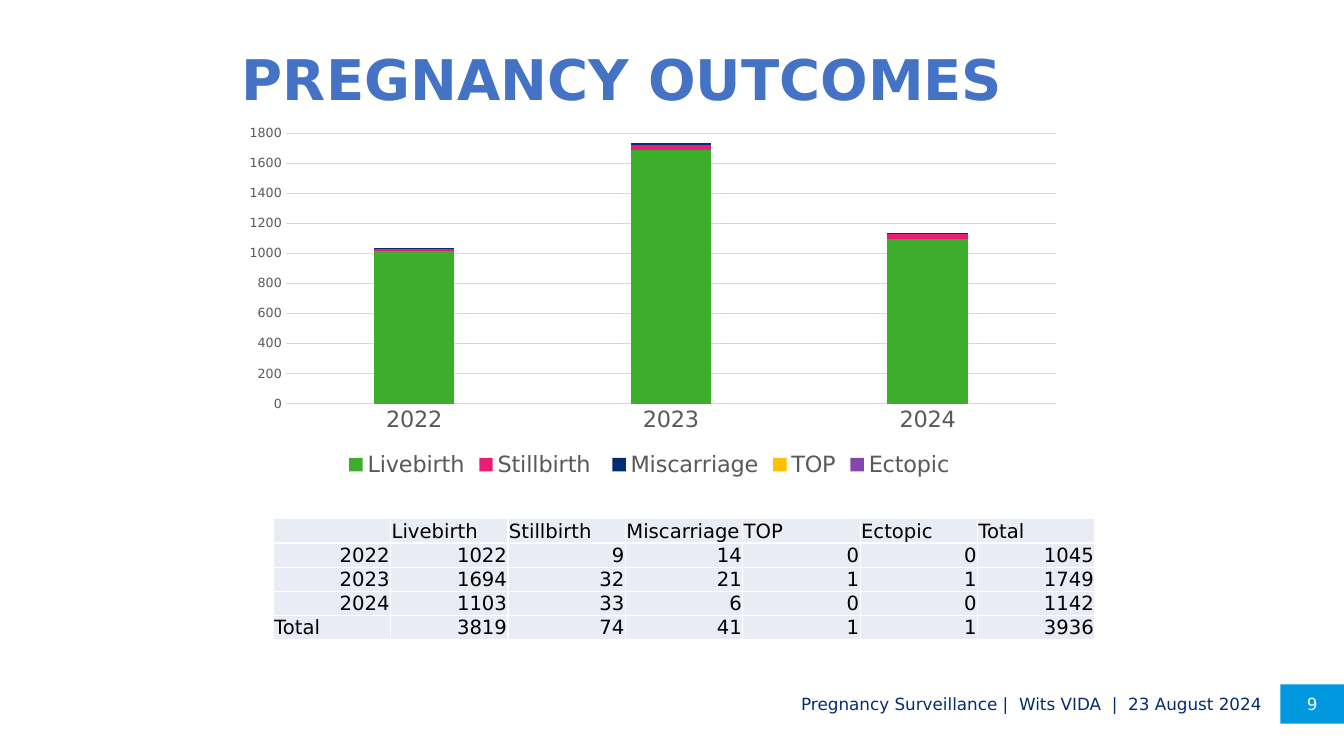
from lxml import etree
from pptx import Presentation
from pptx import util as u
from pptx.chart import data as chart_data
from pptx.dml.color import RGBColor
from pptx.enum import chart as charts, shapes, text
from pptx.oxml import ns

ALIGN, ANCHOR = text.PP_ALIGN, text.MSO_ANCHOR

YEARS = ["2022", "2023", "2024"]
OUTCOMES = {
    "Livebirth": ([1022, 1694, 1103], "3CAE2B"),
    "Stillbirth ": ([9, 32, 33], "E81E76"),
    "Miscarriage": ([14, 21, 6], "032C74"),
    "TOP": ([0, 1, 0], "FFC000"),
    "Ectopic ": ([0, 1, 0], "8347AD"),
}


def rgb(code):
    return RGBColor.from_string(code)


def style_font(font, size, color, bold=False):
    font.name = SlideBuilder.FONT
    font.size = u.Pt(size)
    font.bold = bold
    font.color.rgb = rgb(color)


def write(frame, words, size=12, color="000000", bold=False,
          align=ALIGN.LEFT, spacing=None):
    paragraph = frame.paragraphs[0]
    paragraph.alignment = align
    paragraph.line_spacing = spacing
    if words:
        run = paragraph.add_run()
        run.text = words
        style_font(run.font, size, color, bold)
    else:
        # An empty cell keeps the text size, so its row stays low
        etree.SubElement(paragraph._p, ns.qn("a:endParaRPr"), sz=str(size * 100))


class SlideBuilder:
    FONT = "DejaVu Sans"
    BLUE, NAVY, CYAN = "4472C4", "032C74", "0098DE"
    GREY, GRID, CELL, WHITE = "595959", "D9D9D9", "E9EBF5", "FFFFFF"

    def __init__(self, presentation):
        self.slide = presentation.slides.add_slide(presentation.slide_layouts[5])
        self.slide.background.fill.solid()
        self.slide.background.fill.fore_color.rgb = rgb(self.WHITE)

    def frame(self, shape, anchor):
        frame = shape.text_frame
        frame.word_wrap = True
        frame.auto_size = text.MSO_AUTO_SIZE.NONE
        frame.vertical_anchor = anchor
        frame.margin_left = frame.margin_right = 0
        frame.margin_top = frame.margin_bottom = 0
        return frame

    def title(self, words, *box):
        title = self.slide.shapes.title
        title.left, title.top, title.width, title.height = map(u.Inches, box)
        write(self.frame(title, ANCHOR.TOP), words, size=40, color=self.BLUE,
              bold=True, spacing=0.9)

    def label(self, words, *box, **style):
        label = self.slide.shapes.add_textbox(*map(u.Inches, box))
        write(self.frame(label, ANCHOR.MIDDLE), words, **style)

    def badge(self, words, *box):
        badge = self.slide.shapes.add_shape(
            shapes.MSO_SHAPE.RECTANGLE, *map(u.Inches, box))
        badge.shadow.inherit = False
        badge.fill.solid()
        badge.fill.fore_color.rgb = rgb(self.CYAN)
        badge.line.fill.background()
        write(self.frame(badge, ANCHOR.MIDDLE), words, color=self.WHITE,
              align=ALIGN.CENTER)

    def stacked_chart(self, categories, series, top_value, *box):
        data = chart_data.CategoryChartData()
        data.categories = categories
        for name, (values, _) in series.items():
            data.add_series(name, [round(value, -1) for value in values])
        chart = self.slide.shapes.add_chart(
            charts.XL_CHART_TYPE.COLUMN_STACKED, *map(u.Inches, box), data).chart
        style_font(chart.font, 10, "000000")
        chart.has_title = False

        # Columns
        plot = chart.plots[0]
        plot.gap_width, plot.overlap = 219, 100
        plot.vary_by_categories = False
        for column, (_, color) in zip(plot.series, series.values()):
            column.format.fill.solid()
            column.format.fill.fore_color.rgb = rgb(color)

        # Axes
        years, counts = chart.category_axis, chart.value_axis
        for axis, size in ((years, 16), (counts, 9)):
            axis.major_tick_mark = axis.minor_tick_mark = charts.XL_TICK_MARK.NONE
            style_font(axis.tick_labels.font, size, self.GREY)
        counts.minimum_scale, counts.maximum_scale = 0, top_value
        counts.major_unit = 200
        counts.format.line.fill.background()
        for line in (years.format.line, counts.major_gridlines.format.line):
            line.color.rgb = rgb(self.GRID)
            line.width = u.Pt(0.75)

        # Legend
        chart.has_legend = True
        chart.legend.position = charts.XL_LEGEND_POSITION.BOTTOM
        chart.legend.include_in_layout = False
        style_font(chart.legend.font, 16, self.GREY)

    def cell(self, cell, words):
        properties = cell._tc.get_or_add_tcPr()
        for side in ("lnL", "lnR", "lnT", "lnB"):
            border = etree.SubElement(properties, ns.qn(f"a:{side}"), w="12700")
            fill = etree.SubElement(border, ns.qn("a:solidFill"))
            etree.SubElement(fill, ns.qn("a:srgbClr"), val=self.WHITE)
        cell.fill.solid()
        cell.fill.fore_color.rgb = rgb(self.CELL)
        cell.margin_left = cell.margin_right = cell.margin_top = u.Inches(0.01)
        cell.margin_bottom = 0
        cell.vertical_anchor = ANCHOR.BOTTOM
        write(cell.text_frame, words, size=14,
              align=ALIGN.RIGHT if words.isdigit() else ALIGN.LEFT)

    def table(self, rows, left, top, width, row_height):
        columns = len(rows[0])
        table = self.slide.shapes.add_table(
            len(rows), columns,
            *map(u.Inches, (left, top, width, row_height * len(rows)))).table
        table.first_row = table.horz_banding = False
        for column in table.columns:
            column.width = u.Inches(width / columns)
        for row, values in zip(table.rows, rows):
            row.height = u.Inches(row_height)
            for cell, value in zip(row.cells, values):
                self.cell(cell, str(value))


def outcome_rows():
    counts = [values for values, _ in OUTCOMES.values()]
    yearly = list(zip(*counts))
    yearly.append([sum(values) for values in counts])
    header = ["", *(name.strip() for name in OUTCOMES), "Total"]
    return [header] + [[name, *values, sum(values)]
                       for name, values in zip(YEARS + ["Total"], yearly)]


def main():
    presentation = Presentation()
    presentation.slide_width = u.Inches(13.33)
    presentation.slide_height = u.Inches(7.5)
    page = SlideBuilder(presentation)

    # Heading
    page.title("PREGNANCY OUTCOMES", 2.4, 0.52, 11.26, 0.45)

    # Footer
    page.label("Pregnancy Surveillance |  Wits VIDA  |  23 August 2024",
               6.98, 6.79, 5.54, 0.39, color=page.NAVY, align=ALIGN.RIGHT)
    page.badge("9", 12.7, 6.79, 0.63, 0.39)

    # Outcomes by year
    page.stacked_chart(YEARS, OUTCOMES, 1800, 2.31, 1.18, 8.33, 3.6)
    page.table(outcome_rows(), 2.71, 5.14, 8.15, 0.24)

    presentation.save("out.pptx")


if __name__ == "__main__":
    main()
